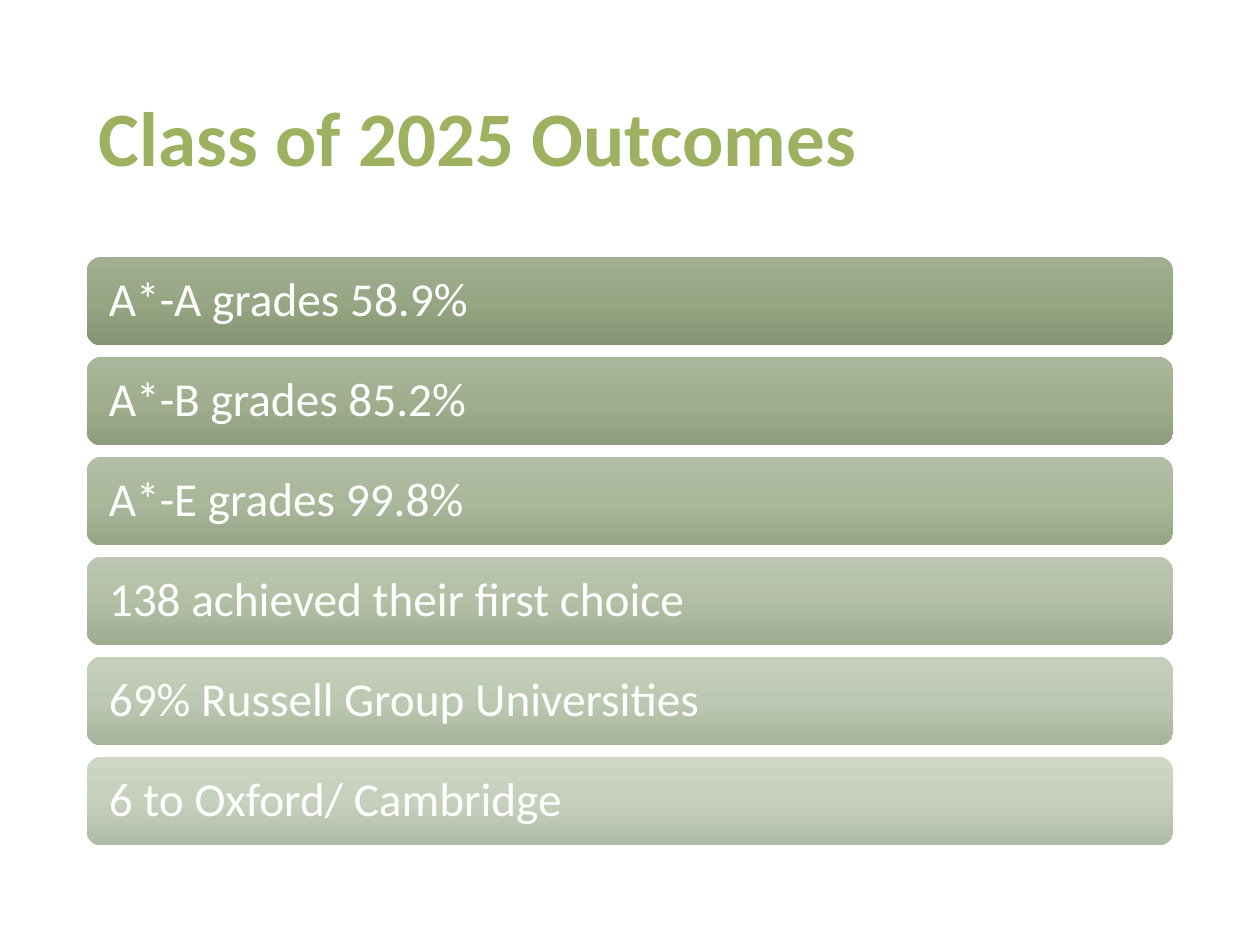
from copy import deepcopy

from pptx import Presentation
from pptx.dml.color import RGBColor
from pptx.enum.shapes import MSO_SHAPE as Shape
from pptx.enum.text import MSO_ANCHOR as Anchor, PP_ALIGN as Align
from pptx.oxml.ns import qn
from pptx.util import Pt

COLORS = {
    "title": "9EB160", "label": "FFFFFF",
    "first_top": "A1AE92", "first_middle": "96A683", "first_bottom": "859573",
    "last_top": "CED6C5", "last_middle": "C6D0BC", "last_bottom": "B0BBA5",
}
OUTCOMES = [
    "A*-A grades 58.9%",
    "A*-B grades 85.2%",
    "A*-E grades 99.8%",
    "138 achieved their first choice",
    "69% Russell Group Universities",
    "6 to Oxford/ Cambridge",
]
LEFT, WIDTH = 49.5, 621
BAR_TOP, BAR_HEIGHT, BAR_PITCH = 146.75, 50.6, 57.13


def blend(part, share):
    first, last = (RGBColor.from_string(COLORS[f"{end}_{part}"]) for end in ("first", "last"))
    return RGBColor(*(round(a + (b - a) * share) for a, b in zip(first, last)))


class OutcomeSlide:
    """Hold the text style and the slide being filled."""

    font = "Calibri"

    def __init__(self, slide):
        self.slide = slide

    def add_words(self, frame, words, size, color, inset, bold=False):
        frame.word_wrap = True
        frame.vertical_anchor = Anchor.MIDDLE
        frame.margin_left = frame.margin_right = Pt(inset)
        paragraph = frame.paragraphs[0]
        paragraph.alignment = Align.LEFT
        paragraph.line_spacing = 0.9
        run = paragraph.add_run()
        run.text = words
        run.font.name, run.font.size, run.font.bold = self.font, Pt(size), bold
        run.font.color.rgb = RGBColor.from_string(COLORS[color])

    def title(self, words, top, height):
        heading = self.slide.shapes.add_textbox(Pt(LEFT), Pt(top), Pt(WIDTH), Pt(height))
        self.add_words(heading.text_frame, words, 44, "title", 7.2, bold=True)

    def bar(self, words, top, share):
        bar = self.slide.shapes.add_shape(
            Shape.ROUNDED_RECTANGLE, Pt(LEFT), Pt(top), Pt(WIDTH), Pt(BAR_HEIGHT))
        bar.shadow.inherit = False
        bar.line.fill.background()
        bar.fill.gradient()
        bar.fill.gradient_angle = 270
        stop_list = next(bar.element.iter(qn("a:gsLst")))
        stop_list.insert(1, deepcopy(stop_list[0]))
        parts = ("top", "middle", "bottom")
        for index, (stop, part) in enumerate(zip(bar.fill.gradient_stops, parts)):
            stop.position = index / 2
            stop.color.rgb = blend(part, share)
        self.add_words(bar.text_frame, words, 27, "label", 10.3)


def main():
    deck = Presentation()
    deck.slide_width, deck.slide_height = Pt(720), Pt(540)
    page = OutcomeSlide(deck.slides.add_slide(deck.slide_layouts[6]))
    page.title("Class of 2025 Outcomes", 28.75, 104.4)
    for row, outcome in enumerate(OUTCOMES):
        page.bar(outcome, BAR_TOP + row * BAR_PITCH, row / (len(OUTCOMES) - 1))
    deck.save("out.pptx")


if __name__ == "__main__":
    main()
